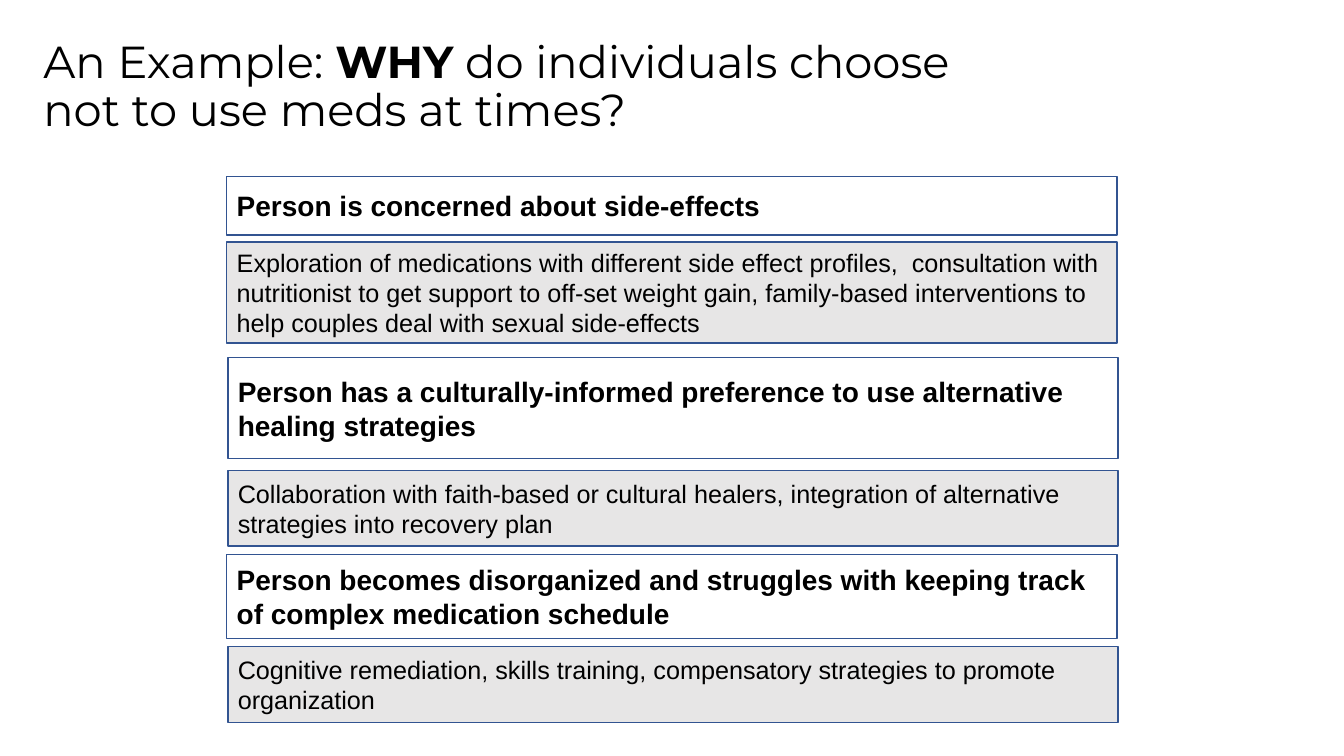
from dataclasses import dataclass
from typing import Any

from pptx import Presentation
from pptx.dml.color import RGBColor
from pptx.enum.shapes import MSO_SHAPE as Preset
from pptx.enum.text import MSO_ANCHOR as Anchor, MSO_AUTO_SIZE as AutoSize, PP_ALIGN as Align
from pptx.util import Pt


@dataclass(frozen=True)
class Theme:
    ink: RGBColor = RGBColor(0x00, 0x00, 0x00)
    border: RGBColor = RGBColor(0x32, 0x54, 0x91)
    reason_fill: RGBColor = RGBColor(0xFF, 0xFF, 0xFF)
    response_fill: RGBColor = RGBColor(0xE7, 0xE6, 0xE6)
    title_font: str = "Montserrat"
    body_font: str = "Arial"
    title_size: float = 32
    reason_size: float = 20
    response_size: float = 18
    border_width: float = 1


@dataclass(frozen=True)
class Panel:
    text: str
    left: float
    top: float
    height: float
    is_reason: bool


THEME = Theme()
PANEL_WIDTH = 636
TITLE_BOX = {"left": 23.75, "top": 12.25, "width": 715, "height": 100.8}
TITLE_PARTS = (
    ("An Example: ", False),
    ("WHY", True),
    (" do individuals choose not to use meds at times?", False),
)
PANELS = (
    Panel("Person is concerned about side-effects", 162, 126, 42, True),
    Panel("Exploration of medications with different side effect profiles,  consultation with "
          "nutritionist to get support to off-set weight gain, family-based interventions to "
          "help couples deal with sexual side-effects", 162, 173, 72, False),
    Panel("Person has a culturally-informed preference to use alternative healing strategies",
          162.75, 255.5, 72, True),
    Panel("Collaboration with faith-based or cultural healers, integration of alternative "
          "strategies into recovery plan", 162.75, 336, 54, False),
    Panel("Person becomes disorganized and struggles with keeping track of complex "
          "medication schedule", 162, 396, 60, True),
    Panel("Cognitive remediation, skills training, compensatory strategies to promote "
          "organization", 162.75, 462, 54, False),
)


def apply_format(target: Any, values: dict[str, Any]) -> None:
    for attribute, value in values.items():
        setattr(target, attribute, value)


def add_text(paragraph: Any, text: str, font: str, size: float, bold: bool) -> None:
    run = paragraph.add_run()
    run.text = text
    apply_format(run.font, {"name": font, "size": Pt(size), "bold": bold})
    run.font.color.rgb = THEME.ink


def write_title(heading: Any) -> None:
    apply_format(heading, {side: Pt(length) for side, length in TITLE_BOX.items()})
    apply_format(heading.text_frame, {
        "word_wrap": True, "auto_size": AutoSize.NONE, "vertical_anchor": Anchor.MIDDLE,
    })
    paragraph = heading.text_frame.paragraphs[0]
    apply_format(paragraph, {"alignment": Align.LEFT, "line_spacing": 0.9})
    for text, bold in TITLE_PARTS:
        add_text(paragraph, text, THEME.title_font, THEME.title_size, bold)


def draw_panel(slide: Any, panel: Panel) -> None:
    box = slide.shapes.add_shape(
        Preset.RECTANGLE, Pt(panel.left), Pt(panel.top), Pt(PANEL_WIDTH), Pt(panel.height))
    box.shadow.inherit = False
    box.fill.solid()
    box.fill.fore_color.rgb = THEME.reason_fill if panel.is_reason else THEME.response_fill
    box.line.color.rgb = THEME.border
    box.line.width = Pt(THEME.border_width)
    apply_format(box.text_frame, {"word_wrap": True, "vertical_anchor": Anchor.MIDDLE})
    paragraph = box.text_frame.paragraphs[0]
    paragraph.alignment = Align.LEFT
    size = THEME.reason_size if panel.is_reason else THEME.response_size
    add_text(paragraph, panel.text, THEME.body_font, size, panel.is_reason)


def main() -> None:
    deck = Presentation()
    apply_format(deck, {"slide_width": Pt(960), "slide_height": Pt(540)})
    slide = deck.slides.add_slide(deck.slide_layouts.get_by_name("Title Only"))
    write_title(slide.shapes.title)
    for panel in PANELS:
        draw_panel(slide, panel)
    deck.save("out.pptx")


if __name__ == "__main__":
    main()
